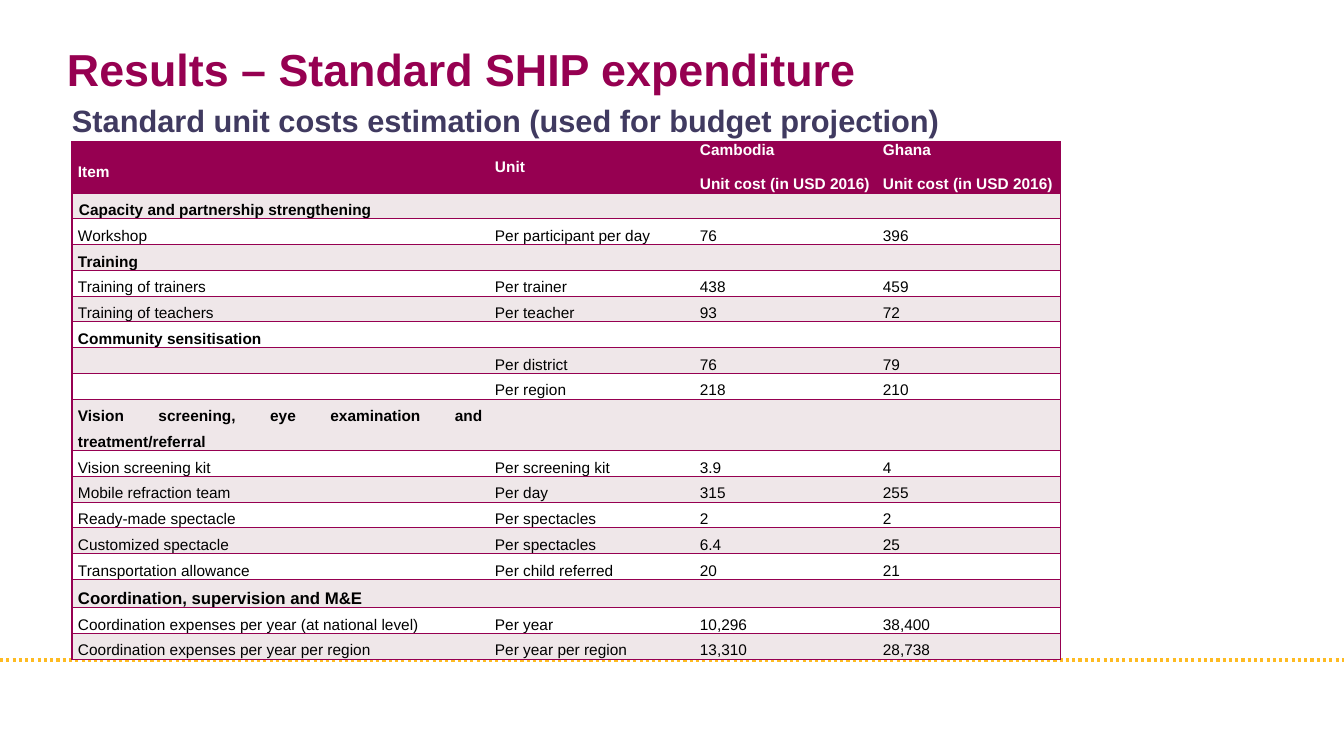
"""Build the slide on standard SHIP expenditure with its unit cost table."""
from dataclasses import dataclass

from lxml.etree import SubElement
from pptx import Presentation
from pptx.dml.color import RGBColor
from pptx.enum.dml import MSO_LINE
from pptx.enum.shapes import MSO_CONNECTOR
from pptx.enum.text import MSO_ANCHOR, PP_ALIGN
from pptx.oxml.ns import qn
from pptx.util import Pt

TITLE = "Results – Standard SHIP expenditure"
SUBTITLE = "Standard unit costs estimation (used for budget projection)"
COST_LABEL = "Unit cost (in USD 2016)"
HEADER = [["Item"], ["Unit"], ["Cambodia", COST_LABEL], ["Ghana", COST_LABEL]]
FIRST_SECTION = "Capacity and partnership strengthening"
SCREENING = "Vision screening, eye examination and treatment/referral"
COORDINATION = "Coordination, supervision and M&E"
COSTS = [
    (FIRST_SECTION, "", "", ""),
    ("Workshop", "Per participant per day", "76", "396"),
    ("Training", "", "", ""),
    ("Training of trainers", "Per trainer", "438", "459"),
    ("Training of teachers", "Per teacher", "93", "72"),
    ("Community sensitisation", "", "", ""),
    ("", "Per district", "76", "79"),
    ("", "Per region", "218", "210"),
    (SCREENING, "", "", ""),
    ("Vision screening kit", "Per screening kit", "3.9", "4"),
    ("Mobile refraction team", "Per day", "315", "255"),
    ("Ready-made spectacle", "Per spectacles", "2", "2"),
    ("Customized spectacle", "Per spectacles", "6.4", "25"),
    ("Transportation allowance", "Per child referred", "20", "21"),
    (COORDINATION, "", "", ""),
    ("Coordination expenses per year (at national level)", "Per year", "10,296", "38,400"),
    ("Coordination expenses per year per region", "Per year per region", "13,310", "28,738"),
]
COLUMN_WIDTHS = [417, 205, 183, 184]
HEADER_HEIGHT, ROW_HEIGHT = 51, 25
TALL_ROWS = {SCREENING: 49, COORDINATION: 27}
PAGE_WIDTH, PAGE_HEIGHT = 1344, 756
RULE_TOP = 660
TITLE_BOX = (67, 37, 1210, 71)
SUBTITLE_BOX = (72, 101, 1212, 43)
TABLE_LEFT, TABLE_TOP = 72, 142


@dataclass(frozen=True)
class Theme:
    font: str = "Arial"
    plum: str = "960051"
    navy: str = "403A60"
    amber: str = "FEBB22"
    band: str = "EFE7E9"
    white: str = "FFFFFF"
    black: str = "000000"
    title: int = 32
    subtitle: int = 22
    section: int = 12
    cell: int = 11


THEME = Theme()


def px(length):
    return round(length * 914400 / 100.8)


def add_span(para, text, size, color, bold):
    span = para.add_run()
    span.text = text
    span.font.name = THEME.font
    span.font.size = Pt(size)
    span.font.bold = bold
    span.font.color.rgb = RGBColor.from_string(color)


def fill_placeholder(box, frame, text, size, color):
    box.left, box.top, box.width, box.height = map(px, frame)
    body = box.text_frame
    body.margin_left = body.margin_right = body.margin_top = body.margin_bottom = 0
    body.vertical_anchor = MSO_ANCHOR.MIDDLE
    body.word_wrap = True
    para = body.paragraphs[0]
    properties = para._p.get_or_add_pPr()
    properties.set("marL", "0")
    properties.set("indent", "0")
    SubElement(properties, qn("a:buNone"))
    para.alignment = PP_ALIGN.LEFT
    para.line_spacing = 0.9
    para.space_before = Pt(0)
    add_span(para, text, size, color, True)


def set_borders(cell, column):
    properties = cell._tc.get_or_add_tcPr()
    last = len(COLUMN_WIDTHS) - 1
    visible = {"L": column == 0, "R": column == last, "T": True, "B": True}
    for side, shown in visible.items():
        line = SubElement(properties, qn(f"a:ln{side}"), w=str(Pt(1)))
        if shown:
            SubElement(SubElement(line, qn("a:solidFill")), qn("a:srgbClr"), val=THEME.plum)
        else:
            SubElement(line, qn("a:noFill"))


def fill_cell(cell, column, lines, background, color, size, bold, spacing, margin=6):
    set_borders(cell, column)
    cell.fill.solid()
    cell.fill.fore_color.rgb = RGBColor.from_string(background)
    cell.margin_left = cell.margin_right = px(margin)
    cell.margin_top = cell.margin_bottom = 0
    cell.vertical_anchor = MSO_ANCHOR.MIDDLE
    for index, text in enumerate(lines):
        para = cell.text_frame.add_paragraph() if index else cell.text_frame.paragraphs[0]
        para.alignment = PP_ALIGN.JUSTIFY
        para.line_spacing = spacing
        if index:
            para.space_before = Pt(12)
        if text:
            add_span(para, text, size, color, bold)
        else:
            SubElement(para._p, qn("a:endParaRPr"), sz=str(size * 100))


def add_rule(page):
    rule = page.shapes.add_connector(
        MSO_CONNECTOR.STRAIGHT, 0, px(RULE_TOP), px(PAGE_WIDTH), px(RULE_TOP))
    rule.line.color.rgb = RGBColor.from_string(THEME.amber)
    rule.line.width = Pt(2.25)
    rule.line.dash_style = MSO_LINE.ROUND_DOT
    SubElement(rule._element.spPr, qn("a:effectLst"))


def add_cost_table(page):
    heights = [HEADER_HEIGHT] + [TALL_ROWS.get(row[0], ROW_HEIGHT) for row in COSTS]
    table = page.shapes.add_table(
        len(heights), len(COLUMN_WIDTHS), px(TABLE_LEFT), px(TABLE_TOP),
        px(sum(COLUMN_WIDTHS)), px(sum(heights))).table
    for column, width in zip(table.columns, COLUMN_WIDTHS):
        column.width = px(width)
    for row, height in zip(table.rows, heights):
        row.height = px(height)
    for column, lines in enumerate(HEADER):
        fill_cell(table.cell(0, column), column, lines, THEME.plum, THEME.white,
                  THEME.cell, True, 1.0 if column else 1.5)
    for number, values in enumerate(COSTS, start=1):
        background = THEME.band if number % 2 else THEME.white
        is_section = not values[1]
        size = THEME.section if values[0] == COORDINATION else THEME.cell
        margin = 7 if values[0] == FIRST_SECTION else 6
        for column, text in enumerate(values):
            fill_cell(table.cell(number, column), column, [text], background,
                      THEME.black, size, is_section, 1.5, margin)


def main():
    deck = Presentation()
    deck.slide_width, deck.slide_height = px(PAGE_WIDTH), px(PAGE_HEIGHT)
    page = deck.slides.add_slide(deck.slide_layouts[1])
    add_rule(page)
    fill_placeholder(page.shapes.title, TITLE_BOX, TITLE, THEME.title, THEME.plum)
    fill_placeholder(page.placeholders[1], SUBTITLE_BOX, SUBTITLE, THEME.subtitle, THEME.navy)
    add_cost_table(page)
    deck.save("out.pptx")


if __name__ == "__main__":
    main()
